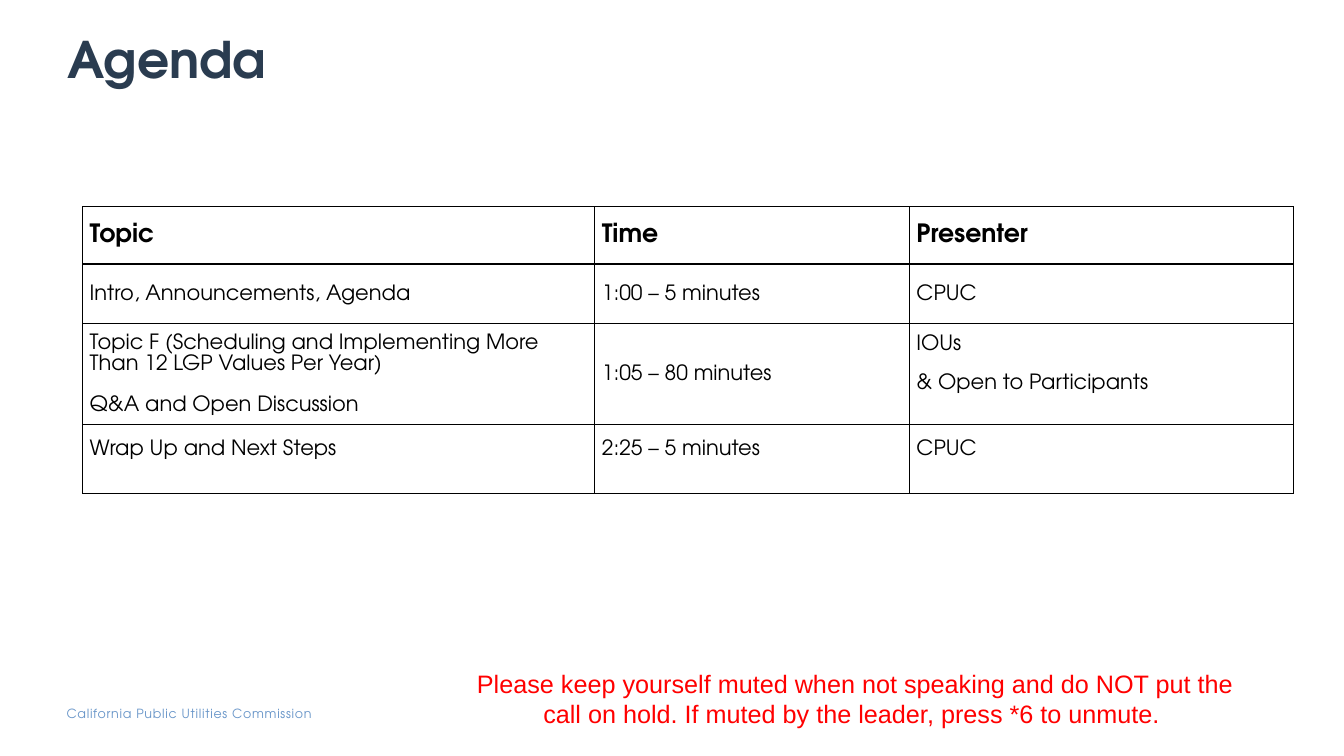
"""Build the agenda slide with its timetable and mute reminder."""
from dataclasses import dataclass

from lxml import etree
from pptx import Presentation
from pptx.dml.color import RGBColor
from pptx.enum.text import MSO_ANCHOR, MSO_AUTO_SIZE, PP_ALIGN
from pptx.oxml.ns import qn
from pptx.util import Inches, Pt

BOTTOM, MIDDLE, TOP = MSO_ANCHOR.BOTTOM, MSO_ANCHOR.MIDDLE, MSO_ANCHOR.TOP
LEFT, CENTER = PP_ALIGN.LEFT, PP_ALIGN.CENTER
NO_AUTOSIZE = MSO_AUTO_SIZE.NONE


@dataclass(frozen=True)
class Style:
    """Font, size, colour and weight of a text."""
    size: float
    color: str
    font: str = "TeX Gyre Adventor"
    bold: bool = False


@dataclass(frozen=True)
class Theme:
    """All text styles and the table border of the slide."""
    title: Style = Style(36, "2A3C50", bold=True)
    header: Style = Style(18, "000000", bold=True)
    body: Style = Style(15, "000000")
    footer: Style = Style(9, "6996C9")
    reminder: Style = Style(18, "FF0000", font="Arial")
    border_color: str = "000000"
    border_width: float = 1


@dataclass(frozen=True)
class Area:
    """Position and size in inches."""
    left: float
    top: float
    width: float
    height: float


@dataclass(frozen=True)
class Entry:
    """Content of one table cell."""
    lines: tuple[str, ...]
    spacing: float = 1.07
    gap: float = 0
    bottom: float = 0


THEME = Theme()
TABLE_AREA = Area(0.82, 2.05, 12.01, 2.66)
COLUMN_WIDTHS = (5.08, 3.12, 3.81)
ROW_HEIGHTS = (0.57, 0.59, 0.82, 0.68)
HEADERS = ("Topic", "Time", "Presenter")
LAST_ROW = ("Wrap Up and Next Steps", "2:25 – 5 minutes", "CPUC")
AGENDA = (
    tuple(Entry((text,), 1) for text in HEADERS),
    (Entry(("Intro, Announcements, Agenda",)), Entry(("1:00 – 5 minutes",)), Entry(("CPUC",))),
    (
        Entry(("Topic F (Scheduling and Implementing More Than 12 LGP Values Per Year)",
               "Q&A and Open Discussion"), gap=14.6),
        Entry(("1:05 – 80 minutes",)),
        Entry(("IOUs", "& Open to Participants"), 1, 13.7, 0.2),
    ),
    tuple(Entry((text,), bottom=0.2) for text in LAST_ROW),
)


def apply_style(para, style: Style) -> None:
    """Set the font of a paragraph."""
    font = para.font
    font.name, font.size, font.bold = style.font, Pt(style.size), style.bold
    font.color.rgb = RGBColor.from_string(style.color)


def place(shape, area: Area) -> None:
    """Move and size a shape."""
    shape.left, shape.top = Inches(area.left), Inches(area.top)
    shape.width, shape.height = Inches(area.width), Inches(area.height)


def set_margins(frame, left: float, top: float, right: float, bottom: float) -> None:
    """Set the inner margins of a text frame or cell in inches."""
    frame.margin_left, frame.margin_top = Inches(left), Inches(top)
    frame.margin_right, frame.margin_bottom = Inches(right), Inches(bottom)


def add_title(page, text: str) -> None:
    """Fill the title placeholder."""
    title = page.shapes.title
    place(title, Area(0.67, 0.28, 12, 0.66))
    frame = title.text_frame
    frame.text = text
    frame.auto_size, frame.vertical_anchor = NO_AUTOSIZE, BOTTOM
    set_margins(frame, 0, 0.05, 0.1, 0.05)
    para = frame.paragraphs[0]
    para.alignment, para.line_spacing = LEFT, 0.9
    apply_style(para, THEME.title)


def add_text(page, area: Area, text: str, style: Style, alignment):
    """Add a wrapped text box and return its frame."""
    box = page.shapes.add_textbox(0, 0, 0, 0)
    place(box, area)
    frame = box.text_frame
    frame.word_wrap, frame.vertical_anchor = True, TOP
    frame.text = text
    para = frame.paragraphs[0]
    para.alignment = alignment
    apply_style(para, style)
    return frame


def add_borders(cell) -> None:
    """Draw a line on all four sides of a cell."""
    properties = cell._tc.get_or_add_tcPr()
    for side in ("a:lnL", "a:lnR", "a:lnT", "a:lnB"):
        line = etree.SubElement(properties, qn(side), w=str(Pt(THEME.border_width)))
        fill = etree.SubElement(line, qn("a:solidFill"))
        etree.SubElement(fill, qn("a:srgbClr"), val=THEME.border_color)


def fill_cell(cell, entry: Entry, style: Style) -> None:
    """Write and format one table cell."""
    add_borders(cell)
    cell.fill.background()
    cell.vertical_anchor = MIDDLE
    set_margins(cell, 0.07, 0, 0.07, entry.bottom)
    cell.text = "\n".join(entry.lines)
    for index, para in enumerate(cell.text_frame.paragraphs):
        para.line_spacing = entry.spacing
        if index:
            para.space_before = Pt(entry.gap)
        apply_style(para, style)


def add_agenda(page) -> None:
    """Add the agenda table."""
    area = TABLE_AREA
    table = page.shapes.add_table(
        len(AGENDA), len(HEADERS), Inches(area.left), Inches(area.top),
        Inches(area.width), Inches(area.height)).table
    table.first_row = table.horz_banding = False
    for column, width in zip(table.columns, COLUMN_WIDTHS):
        column.width = Inches(width)
    for row_index, (row, height) in enumerate(zip(table.rows, ROW_HEIGHTS)):
        row.height = Inches(height)
        style = THEME.body if row_index else THEME.header
        for cell, entry in zip(row.cells, AGENDA[row_index]):
            fill_cell(cell, entry, style)


def main() -> None:
    """Build and save the deck."""
    deck = Presentation()
    deck.slide_width, deck.slide_height = Inches(13.33), Inches(7.5)
    page = deck.slides.add_slide(deck.slide_layouts.get_by_name("Title Only"))
    footer = add_text(page, Area(0.66, 7, 3.21, 0.15),
                      "California Public Utilities Commission", THEME.footer, LEFT)
    set_margins(footer, 0, 0, 0, 0)
    footer.paragraphs[0].runs[0].font._element.set("spc", "50")
    add_title(page, "Agenda")
    add_agenda(page)
    add_text(page, Area(4.44, 6.58, 8.08, 0.52),
             "Please keep yourself muted when not speaking and do NOT put the call on hold. "
             "If muted by the leader, press *6 to unmute. ", THEME.reminder, CENTER)
    deck.save("out.pptx")


if __name__ == "__main__":
    main()
